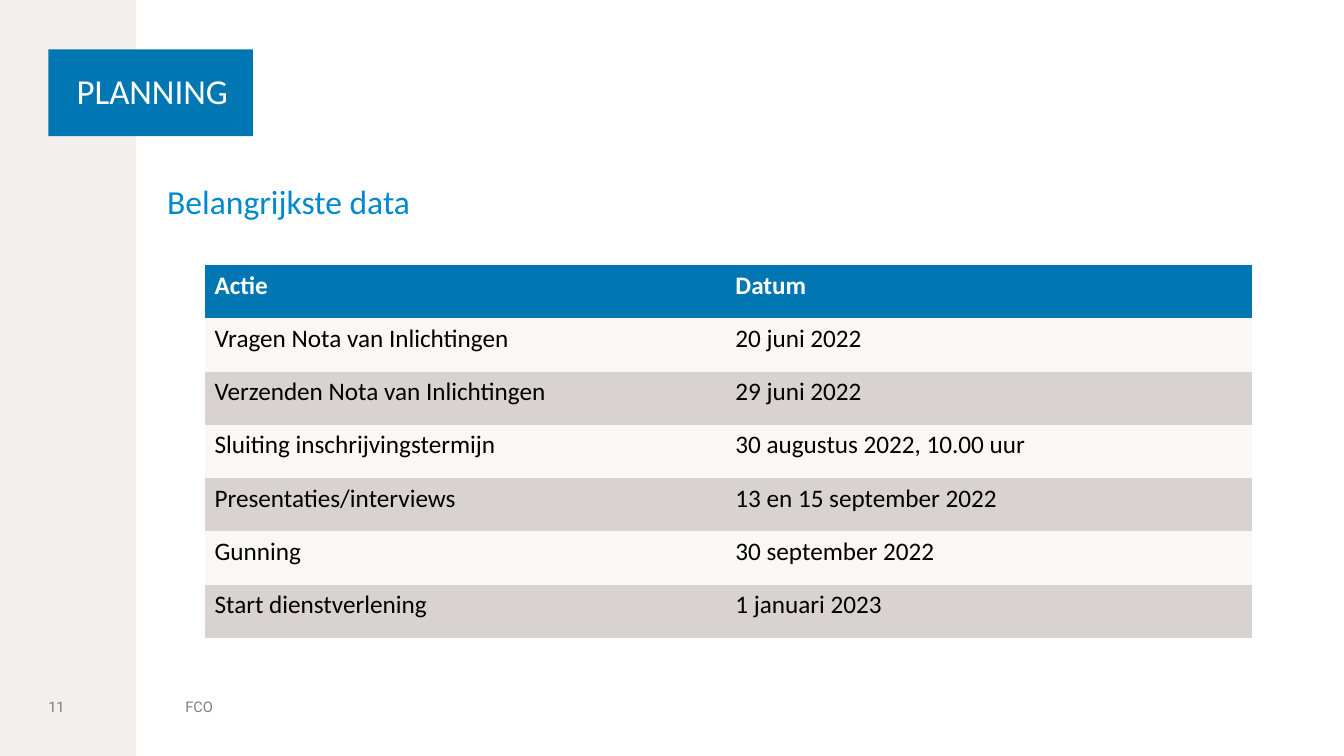
"""Build the planning slide with its table of key dates."""
from pptx import Presentation
from pptx.dml.color import RGBColor as Rgb
from pptx.enum.shapes import MSO_SHAPE as Shape
from pptx.enum.text import MSO_ANCHOR as Anchor, MSO_AUTO_SIZE as Fit, PP_ALIGN as Align
from pptx.util import Inches, Pt

TITLE = "PLANNING"
HEAD = "Belangrijkste data"
FOOT = "FCO"
PAGE = "11"
DATES = [
    ("Actie", "Datum"),
    ("Vragen Nota van Inlichtingen", "20 juni 2022"),
    ("Verzenden Nota van Inlichtingen", "29 juni 2022"),
    ("Sluiting inschrijvingstermijn", "30 augustus 2022, 10.00 uur"),
    ("Presentaties/interviews", "13 en 15 september 2022"),
    ("Gunning", "30 september 2022"),
    ("Start dienstverlening", "1 januari 2023"),
]

WIDE, HIGH = 13.34, 7.5
EDGE = 0.48
BAR = 1.35
COLS = 5.17, 5.23
ROW = 3.7 / len(DATES)
FOOT_TOP, FOOT_HIGH = 6.52, 0.98
NO_STYLE = "{2D5ABB26-0587-4C30-8999-92F81FD0307C}"

BLUE = Rgb(0x00, 0x77, 0xB3)
SKY = Rgb(0x00, 0x89, 0xCF)
SAND = Rgb(0xF2, 0xEF, 0xED)
LIGHT = Rgb(0xFA, 0xF7, 0xF5)
DARK = Rgb(0xD8, 0xD3, 0xD0)
GRAY = Rgb(0x7F, 0x7F, 0x7F)
BLACK = Rgb(0, 0, 0)
WHITE = Rgb(0xFF, 0xFF, 0xFF)


def box(*sides):
    return [Inches(side) for side in sides]


def paint(part, color):
    part.fill.solid()
    part.fill.fore_color.rgb = color


def write(frame, text, size=18, color=BLACK, font="Calibri", bold=False, space=None):
    frame.text = text
    para = frame.paragraphs[0]
    para.alignment = Align.LEFT
    para.line_spacing = space
    face = para.runs[0].font
    face.name, face.size, face.bold = font, Pt(size), bold
    face.color.rgb = color


def inset(frame, left=0, rest=0):
    frame.margin_left = Inches(left)
    frame.margin_top = frame.margin_right = frame.margin_bottom = Inches(rest)


def label(slide, place, text, anchor=Anchor.MIDDLE, **style):
    frame = slide.shapes.add_textbox(*box(*place)).text_frame
    frame.word_wrap = True
    frame.vertical_anchor = anchor
    inset(frame)
    write(frame, text, **style)


def add_title(slide):
    title = slide.shapes.title
    title.left, title.top, title.width, title.height = box(EDGE, 0.49, 2.03, 0.86)
    paint(title, BLUE)
    frame = title.text_frame
    frame.auto_size = Fit.NONE
    frame.word_wrap = False
    frame.vertical_anchor = Anchor.MIDDLE
    inset(frame, 0.28, 0.24)
    write(frame, TITLE, size=25, color=WHITE, space=0.9)


def add_bar(slide):
    bar = slide.shapes.add_shape(Shape.RECTANGLE, *box(0, 0, BAR, HIGH))
    bar.shadow.inherit = False
    paint(bar, SAND)
    bar.line.fill.background()
    slide.shapes.title.element.addprevious(bar.element)


def add_dates(slide):
    place = box(2.03, 2.63, sum(COLS), ROW * len(DATES))
    frame = slide.shapes.add_table(len(DATES), len(COLS), *place)
    frame.element.xpath(".//a:tableStyleId")[0].text = NO_STYLE
    table = frame.table
    for col, wide in zip(table.columns, COLS):
        col.width = Inches(wide)
    for r, texts in enumerate(DATES):
        table.rows[r].height = Inches(ROW)
        top = r == 0
        fill = BLUE if top else (DARK, LIGHT)[r % 2]
        for c, text in enumerate(texts):
            cell = table.cell(r, c)
            paint(cell, fill)
            write(cell.text_frame, text, color=WHITE if top else BLACK, bold=top)


def main():
    deck = Presentation()
    deck.slide_width, deck.slide_height = box(WIDE, HIGH)
    slide = deck.slides.add_slide(deck.slide_layouts[5])
    add_bar(slide)
    add_title(slide)
    small = {"size": 10.5, "color": GRAY, "font": "Roboto"}
    label(slide, (1.84, FOOT_TOP, 7.57, FOOT_HIGH), FOOT, **small)
    label(slide, (EDGE, FOOT_TOP, 0.67, FOOT_HIGH), PAGE, **small)
    add_dates(slide)
    label(slide, (1.66, 1.84, 10.46, 0.55), HEAD, Anchor.TOP, size=24, color=SKY, space=0.9)
    deck.save("out.pptx")


if __name__ == "__main__":
    main()
